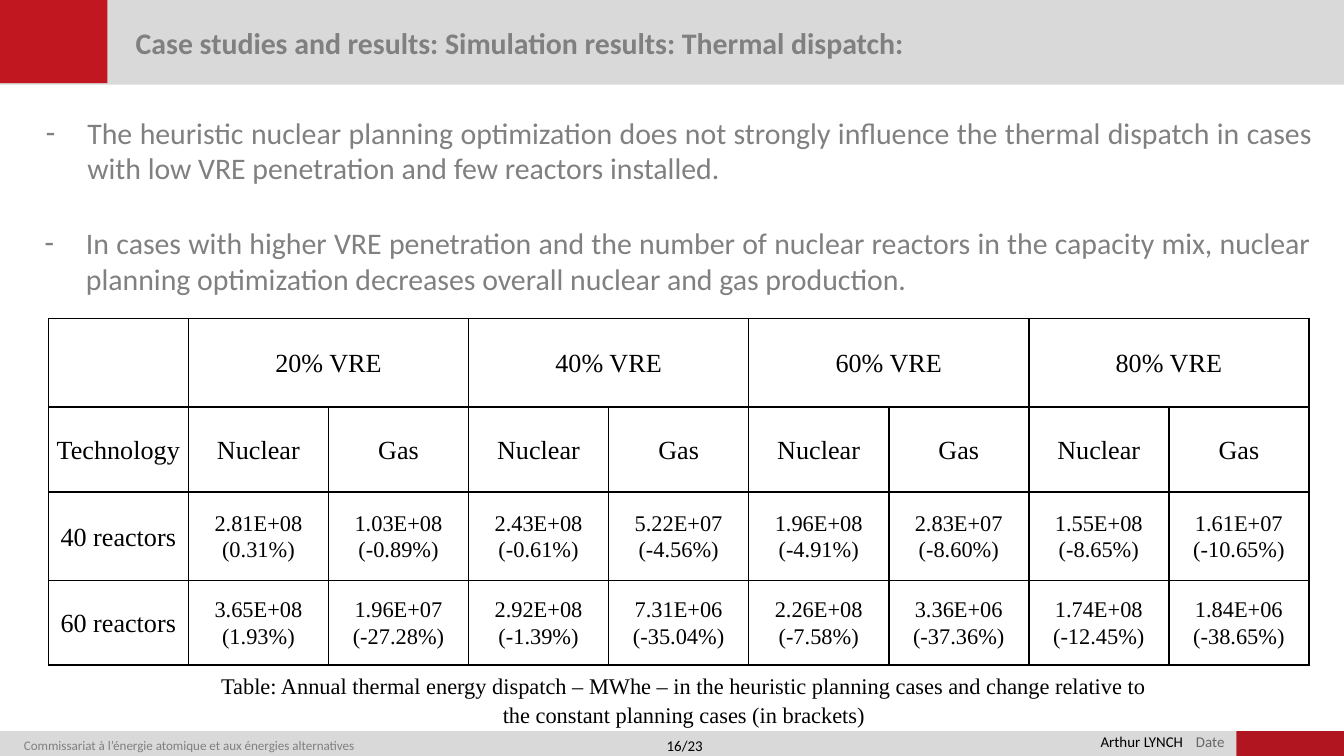
from lxml.etree import SubElement
from pptx import Presentation
from pptx.dml.color import RGBColor
from pptx.enum.shapes import MSO_SHAPE
from pptx.enum.text import MSO_ANCHOR, MSO_AUTO_SIZE, PP_ALIGN
from pptx.oxml import parse_xml
from pptx.oxml.ns import nsdecls, qn
from pptx.util import Inches, Pt

BLACK = RGBColor(0, 0, 0)
GREY = RGBColor(0x80, 0x80, 0x80)
DATE_GREY = RGBColor(0x66, 0x66, 0x66)
BAND_GREY = RGBColor(0xD9, 0xD9, 0xD9)
HEADER_RED = RGBColor(0xC1, 0x17, 0x20)
FOOTER_RED = RGBColor(0xB1, 0x15, 0x1F)
SANS, SERIF = "Calibri", "Times New Roman"

SLIDE_WIDTH = 10
SLIDE_HEIGHT = SLIDE_WIDTH * 9 / 16

BANDS = [
    (0, 5.44, 9.2, 0.21, BAND_GREY),
    (0, -0.02, SLIDE_WIDTH, 0.65, BAND_GREY),
    (9.2, 5.44, 0.8, 0.19, FOOTER_RED),
    (0, -0.02, 0.8, 0.64, HEADER_RED),
]
FINDINGS = [
    (0.24, 0.8, "The heuristic nuclear planning optimization does not strongly influence "
     "the thermal dispatch in cases with low VRE penetration and few reactors installed."),
    (0.23, 1.62, "In cases with higher VRE penetration and the number of nuclear reactors "
     "in the capacity mix, nuclear planning optimization decreases overall nuclear and gas "
     "production. "),
]
VRE_SHARES = ["20% VRE", "40% VRE", "60% VRE", "80% VRE"]
TECHNOLOGIES = ["Nuclear", "Gas"]
DISPATCH = {
    "40 reactors": [
        ("2.81E+08", "(0.31%)"), ("1.03E+08", "(-0.89%)"),
        ("2.43E+08", "(-0.61%)"), ("5.22E+07", "(-4.56%)"),
        ("1.96E+08", "(-4.91%)"), ("2.83E+07", "(-8.60%)"),
        ("1.55E+08", "(-8.65%)"), ("1.61E+07", "(-10.65%)"),
    ],
    "60 reactors": [
        ("3.65E+08", "(1.93%)"), ("1.96E+07", "(-27.28%)"),
        ("2.92E+08", "(-1.39%)"), ("7.31E+06", "(-35.04%)"),
        ("2.26E+08", "(-7.58%)"), ("3.36E+06", "(-37.36%)"),
        ("1.74E+08", "(-12.45%)"), ("1.84E+06", "(-38.65%)"),
    ],
}
ROW_HEIGHTS = [0.66, 0.63, 0.66, 0.63]
TABLE_WIDTH = 9.38


def place(shape, left, top, width, height):
    shape.left, shape.top = Inches(left), Inches(top)
    shape.width, shape.height = Inches(width), Inches(height)


def write(paragraph, text, size, font=SANS, color=BLACK, align=PP_ALIGN.LEFT,
          spacing=1.0, bold=False):
    paragraph.alignment = align
    paragraph.line_spacing = spacing
    paragraph.space_before = Pt(0)
    run = paragraph.add_run()
    run.text = text
    run.font.name, run.font.size, run.font.bold = font, Pt(size), bold
    run.font.color.rgb = color


def add_band(slide, left, top, width, height, color):
    """Add a plain rectangle behind the title."""
    band = slide.shapes.add_shape(MSO_SHAPE.RECTANGLE, Inches(left), Inches(top),
                                  Inches(width), Inches(height))
    band.shadow.inherit = False
    band.fill.solid()
    band.fill.fore_color.rgb = color
    band.line.fill.background()
    slide.shapes.title.element.addprevious(band.element)


def add_label(slide, box, text, size, **style):
    label = slide.shapes.add_textbox(*map(Inches, box))
    label.text_frame.word_wrap = True
    write(label.text_frame.paragraphs[0], text, size, **style)


def fill_title(title, text):
    place(title, 0.91, 0.14, 7.64, 0.35)
    frame = title.text_frame
    frame.auto_size = MSO_AUTO_SIZE.NONE
    frame.vertical_anchor = MSO_ANCHOR.MIDDLE
    frame.margin_top = frame.margin_bottom = Inches(0.04)
    write(frame.paragraphs[0], text, 16, color=GREY, bold=True)


def fill_finding(body, left, top, text):
    place(body, left, top, 9.63, 0.64)
    body.text_frame.auto_size = MSO_AUTO_SIZE.NONE
    paragraph = body.text_frame.paragraphs[0]
    properties = paragraph._p.get_or_add_pPr()
    properties.set("marL", str(Inches(0.31)))
    properties.set("indent", str(-Inches(0.31)))
    SubElement(properties, qn("a:buChar")).set("char", "-")
    write(paragraph, text, 16, color=GREY, align=PP_ALIGN.JUSTIFY)


def format_cell(cell):
    cell.fill.background()
    cell.vertical_anchor = MSO_ANCHOR.MIDDLE
    cell.margin_left = cell.margin_right = Inches(0.05)
    cell.margin_top = cell.margin_bottom = 0
    properties = cell._tc.get_or_add_tcPr()
    for position, side in enumerate("LRTB"):
        properties.insert(position, parse_xml(
            f'<a:ln{side} {nsdecls("a")} w="{Pt(1)}"><a:solidFill>'
            f'<a:srgbClr val="{BLACK}"/></a:solidFill></a:ln{side}>'))


def fill_cell(cell, lines, size):
    frame = cell.text_frame
    for number, line in enumerate(lines):
        paragraph = frame.add_paragraph() if number else frame.paragraphs[0]
        write(paragraph, line, size, font=SERIF, align=PP_ALIGN.CENTER, spacing=1.07)


def add_dispatch_table(slide):
    column_count = 1 + len(VRE_SHARES) * len(TECHNOLOGIES)
    table = slide.shapes.add_table(
        len(ROW_HEIGHTS), column_count, Inches(0.36), Inches(2.37),
        Inches(TABLE_WIDTH), Inches(sum(ROW_HEIGHTS))).table
    table.first_row = table.horz_banding = False
    for column in table.columns:
        column.width = Inches(TABLE_WIDTH / column_count)
    for row, height in zip(table.rows, ROW_HEIGHTS):
        row.height = Inches(height)
    for cell in table.iter_cells():
        format_cell(cell)

    for group, share in enumerate(VRE_SHARES):
        first = 1 + group * len(TECHNOLOGIES)
        heading = table.cell(0, first)
        heading.merge(table.cell(0, first + len(TECHNOLOGIES) - 1))
        fill_cell(heading, [share], 14)
    for column, name in enumerate(["Technology"] + TECHNOLOGIES * len(VRE_SHARES)):
        fill_cell(table.cell(1, column), [name], 14)
    for row, (reactors, values) in enumerate(DISPATCH.items(), start=2):
        fill_cell(table.cell(row, 0), [reactors], 14)
        for column, energy_and_change in enumerate(values, start=1):
            fill_cell(table.cell(row, column), energy_and_change, 12)


def main():
    deck = Presentation()
    deck.slide_width, deck.slide_height = Inches(SLIDE_WIDTH), Inches(SLIDE_HEIGHT)
    two_content = deck.slide_layouts[3]
    slide = deck.slides.add_slide(two_content)

    for band in BANDS:
        add_band(slide, *band)
    fill_title(slide.shapes.title,
               "Case studies and results: Simulation results: Thermal dispatch:")
    for number, finding in enumerate(FINDINGS, start=1):
        fill_finding(slide.placeholders[number], *finding)
    add_dispatch_table(slide)
    add_label(slide, (1.47, 4.94, 7.24, 0.53),
              "Table: Annual thermal energy dispatch – MWhe – in the heuristic planning cases "
              "and change relative to the constant planning cases (in brackets)",
              12, font=SERIF, align=PP_ALIGN.CENTER, spacing=1.07)

    add_label(slide, (0.08, 5.39, 2.81, 0.26),
              "Commissariat à l’énergie atomique et aux énergies alternatives",
              7, color=GREY, spacing=1.4)
    add_label(slide, (4.59, 5.43, 1.01, 0.24), "16/23", 8, align=PP_ALIGN.CENTER)
    add_label(slide, (8.09, 5.4, 1.01, 0.24), "Arthur LYNCH", 8)
    add_label(slide, (7.91, 5.42, 1.3, 0.22), "Date", 8, color=DATE_GREY,
              align=PP_ALIGN.RIGHT, spacing=0.9)
    deck.save("out.pptx")


if __name__ == "__main__":
    main()
